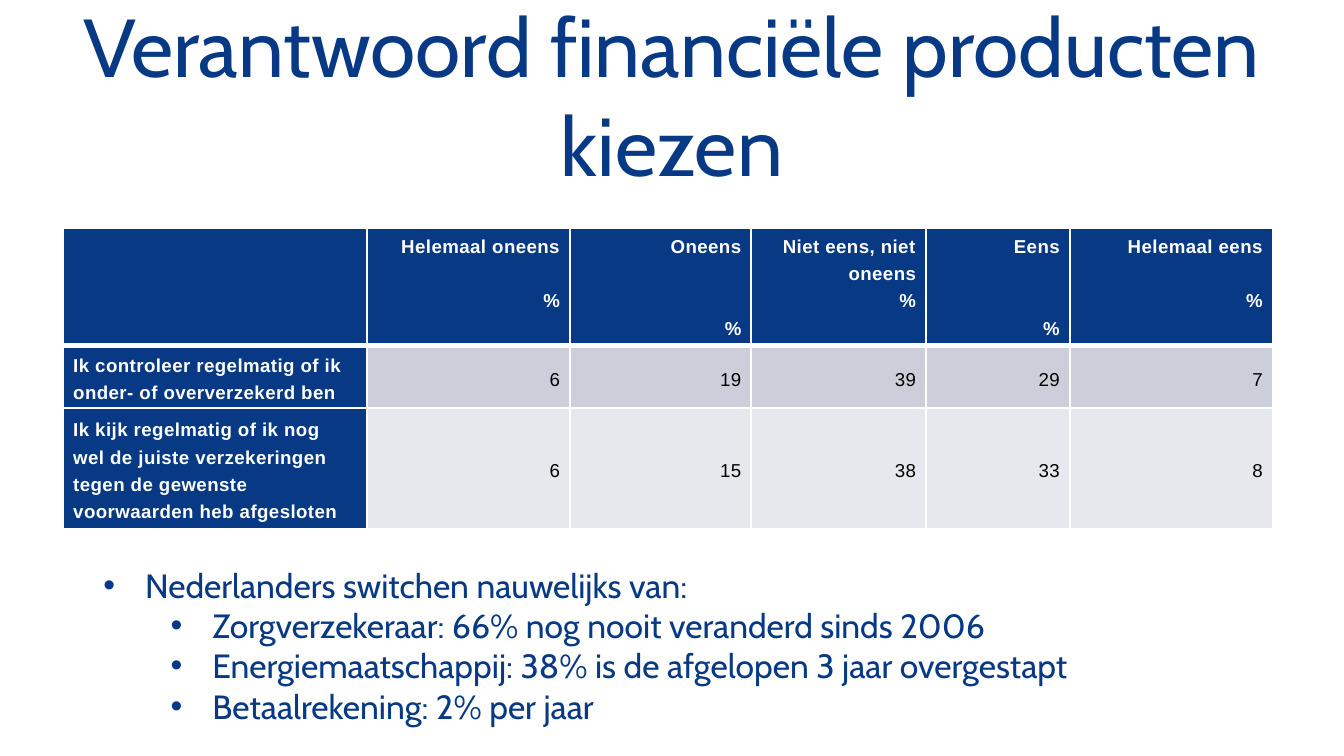
from lxml import etree
from pptx import Presentation
from pptx.dml.color import RGBColor
from pptx.enum.text import MSO_ANCHOR, MSO_AUTO_SIZE, PP_ALIGN
from pptx.oxml.ns import qn
from pptx.util import Inches, Pt

LEFT, CENTER, RIGHT = PP_ALIGN.LEFT, PP_ALIGN.CENTER, PP_ALIGN.RIGHT
TOP, MIDDLE = MSO_ANCHOR.TOP, MSO_ANCHOR.MIDDLE
NO_FIT, GROW = MSO_AUTO_SIZE.NONE, MSO_AUTO_SIZE.SHAPE_TO_FIT_TEXT

BLUE, WHITE, BLACK = "083984", "FFFFFF", "000000"
BAND_COLORS = ["CCCED9", "E7E8ED"]
TITLE_FONT = {"name": "Cabin", "size": Pt(44)}
LIST_FONT = {"name": "Cabin", "size": Pt(18)}
LABEL_FONT = {"name": "Arial", "size": Pt(10), "bold": True}
VALUE_FONT = {**LABEL_FONT, "bold": False}
CELL_MARGINS = {
    "margin_left": Pt(5.4),
    "margin_right": Pt(5.4),
    "margin_top": Pt(1.1),
    "margin_bottom": Pt(1.1),
}
LINE_HEIGHT = 14.6

COLUMN_WIDTHS = [2.26, 1.51, 1.35, 1.3, 1.07, 1.51]
TABLE_HEIGHT = 2.28
HEADERS = [
    ("Helemaal oneens", 1),
    ("Oneens", 2),
    ("Niet eens, niet oneens", 0),
    ("Eens", 2),
    ("Helemaal eens", 1),
]
STATEMENTS = [
    ("Ik controleer regelmatig of ik onder- of oververzekerd ben", [6, 19, 39, 29, 7]),
    (
        "Ik kijk regelmatig of ik nog wel de juiste verzekeringen "
        "tegen de gewenste voorwaarden heb afgesloten",
        [6, 15, 38, 33, 8],
    ),
]
BULLETS = [
    ("Nederlanders switchen nauwelijks van:", 0),
    ("Zorgverzekeraar: 66% nog nooit veranderd sinds 2006", 1),
    ("Energiemaatschappij: 38% is de afgelopen 3 jaar overgestapt", 1),
    ("Betaalrekening: 2% per jaar", 1),
]


def color(value):
    return RGBColor.from_string(value)


def set_attributes(target, values):
    for name, value in values.items():
        setattr(target, name, value)


def place(shape, left, top, width, height):
    set_attributes(shape, {
        "left": Inches(left),
        "top": Inches(top),
        "width": Inches(width),
        "height": Inches(height),
    })


def paragraph_at(text_frame, index):
    return text_frame.paragraphs[0] if index == 0 else text_frame.add_paragraph()


def add_text(paragraph, text, font, font_color):
    run = paragraph.add_run()
    run.text = text
    set_attributes(run.font, font)
    run.font.color.rgb = color(font_color)
    return run


def add_bullet(paragraph, level):
    properties = paragraph._p.get_or_add_pPr()
    properties.set("marL", str(Inches(0.31 + 0.5 * level)))
    properties.set("indent", str(Inches(-0.31)))
    etree.SubElement(properties, qn("a:buFont")).set("typeface", "Arial")
    etree.SubElement(properties, qn("a:buChar")).set("char", "•")


def add_borders(cell, bottom_width):
    properties = cell._tc.get_or_add_tcPr()
    for side, width in {"L": 1, "R": 1, "T": 1, "B": bottom_width}.items():
        line = etree.SubElement(properties, qn(f"a:ln{side}"))
        line.set("w", str(Pt(width)))
        fill = etree.SubElement(line, qn("a:solidFill"))
        etree.SubElement(fill, qn("a:srgbClr")).set("val", WHITE)


def format_cell(cell, fill_color, anchor=MIDDLE, bottom_width=1):
    set_attributes(cell, {**CELL_MARGINS, "vertical_anchor": anchor})
    add_borders(cell, bottom_width)
    cell.fill.solid()
    cell.fill.fore_color.rgb = color(fill_color)


def add_cell_line(cell, index, text, font, font_color, alignment=RIGHT, gap=0):
    paragraph = paragraph_at(cell.text_frame, index)
    set_attributes(paragraph, {"alignment": alignment, "line_spacing": 1.3})
    if gap:
        paragraph.space_before = Pt(gap)
    run = add_text(paragraph, text, font, font_color)
    run._r.get_or_add_rPr().set("spc", "25")


def add_title(slide):
    title = slide.shapes.title
    place(title, 0.5, 0.23, 9, 0.94)
    set_attributes(title.text_frame, {
        "word_wrap": True, "auto_size": NO_FIT, "vertical_anchor": MIDDLE,
    })
    paragraph = title.text_frame.paragraphs[0]
    paragraph.alignment = CENTER
    add_text(paragraph, "Verantwoord financiële producten kiezen", TITLE_FONT, BLUE)


def add_survey_table(slide):
    frame = slide.shapes.add_table(
        len(STATEMENTS) + 1, len(COLUMN_WIDTHS), Inches(0.47), Inches(1.7),
        Inches(sum(COLUMN_WIDTHS)), Inches(TABLE_HEIGHT),
    )
    table = frame.table
    for column, width in zip(table.columns, COLUMN_WIDTHS):
        column.width = Inches(width)
    for row in table.rows:
        row.height = 0
    frame.height = Inches(TABLE_HEIGHT)

    format_cell(table.cell(0, 0), BLUE, TOP, 3)
    for column, (header, blank_lines) in enumerate(HEADERS, 1):
        cell = table.cell(0, column)
        format_cell(cell, BLUE, TOP, 3)
        add_cell_line(cell, 0, header, LABEL_FONT, WHITE)
        add_cell_line(cell, 1, "%", LABEL_FONT, WHITE, gap=blank_lines * LINE_HEIGHT)

    for row, (statement, values) in enumerate(STATEMENTS, 1):
        label = table.cell(row, 0)
        format_cell(label, BLUE)
        add_cell_line(label, 0, statement, LABEL_FONT, WHITE, LEFT)
        for column, value in enumerate(values, 1):
            cell = table.cell(row, column)
            format_cell(cell, BAND_COLORS[row - 1])
            add_cell_line(cell, 0, str(value), VALUE_FONT, BLACK)


def add_bullet_list(slide):
    body = slide.placeholders[1]
    place(body, 0.67, 4.15, 8.03, 1.31)
    set_attributes(body.text_frame, {
        "word_wrap": True, "auto_size": GROW, "vertical_anchor": TOP,
    })
    for index, (text, level) in enumerate(BULLETS):
        paragraph = paragraph_at(body.text_frame, index)
        set_attributes(paragraph, {
            "level": level, "alignment": LEFT, "space_before": Pt(0),
        })
        add_bullet(paragraph, level)
        add_text(paragraph, text, LIST_FONT, BLUE)


def main():
    presentation = Presentation()
    presentation.slide_width = Inches(10)
    presentation.slide_height = Inches(10) * 9 // 16
    slide = presentation.slides.add_slide(presentation.slide_layouts[1])
    add_title(slide)
    add_survey_table(slide)
    add_bullet_list(slide)
    presentation.save("out.pptx")


if __name__ == "__main__":
    main()
